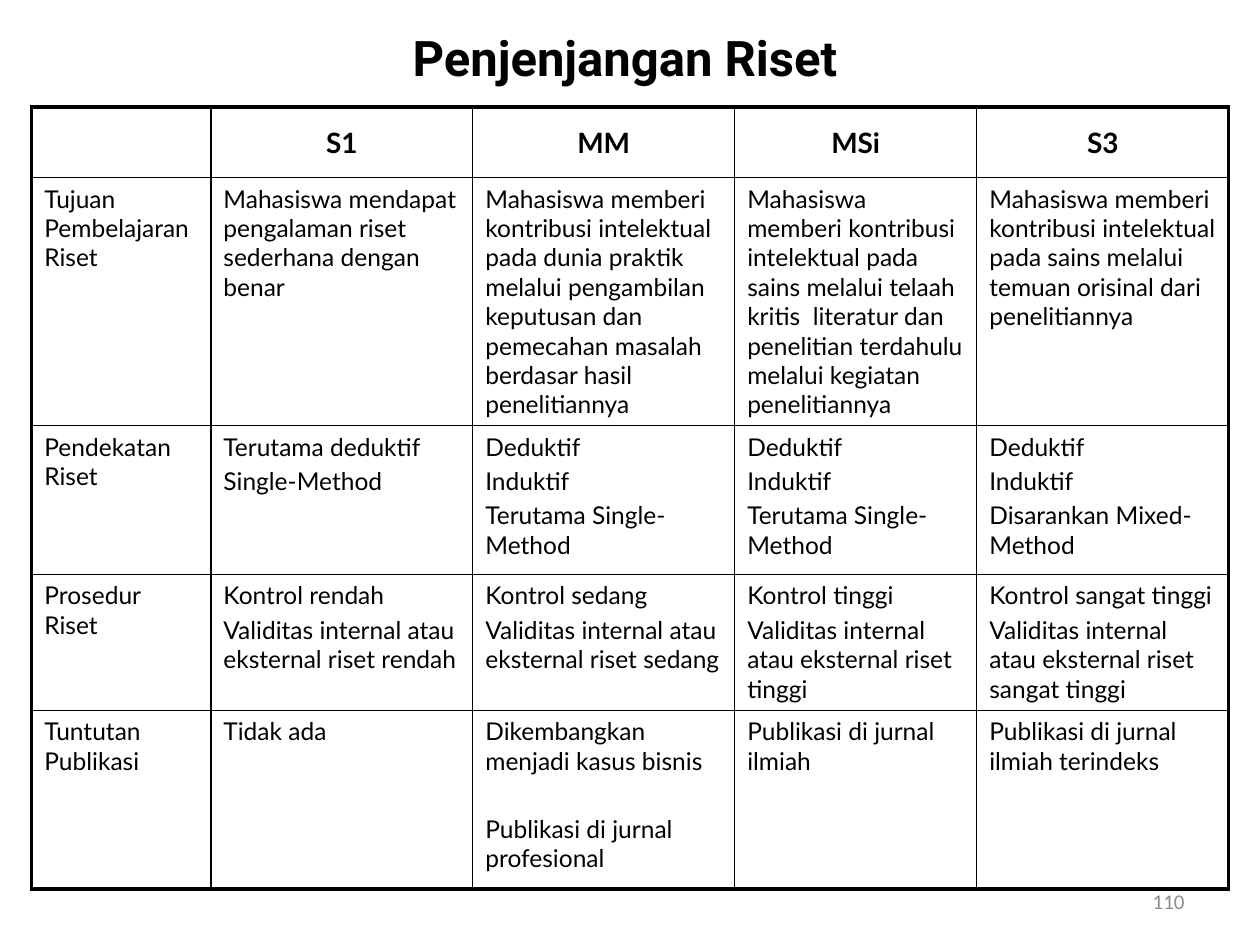
"""Build the slide comparing research levels across degree programmes."""
from lxml.etree import SubElement
from pptx import Presentation
from pptx.dml.color import RGBColor
from pptx.enum.text import MSO_ANCHOR as ANCHOR, MSO_AUTO_SIZE as FIT, PP_ALIGN as ALIGN
from pptx.oxml.ns import qn
from pptx.util import Cm, Pt


def write(tf, text, size=14, font="Lato", color="000000", bold=False,
          align=ALIGN.LEFT, anchor=ANCHOR.TOP, gap=2.8):
    tf.word_wrap = True
    tf.vertical_anchor = anchor
    for i, line in enumerate(text.split("\n")):
        p = tf.add_paragraph() if i else tf.paragraphs[0]
        p.alignment = align
        p.space_before = Pt(gap if i else 0)
        r = p.add_run()
        r.text = line
        r.font.size = Pt(size)
        r.font.name = font
        r.font.bold = bold
        r.font.color.rgb = RGBColor.from_string(color)


def set_border(cell, side, width, color="000000"):
    ln = SubElement(cell._tc.get_or_add_tcPr(), qn(f"a:ln{side}"), w=str(Pt(width)))
    SubElement(SubElement(ln, qn("a:solidFill")), qn("a:srgbClr"), val=color)


prs = Presentation()
prs.slide_width, prs.slide_height = Cm(25.4), Cm(19.05)
s = prs.slides.add_slide(prs.slide_layouts[5])

title = s.shapes.title
title.left, title.top, title.width, title.height = Cm(0.43), Cm(0.43), Cm(24.33), Cm(1.57)
tf = title.text_frame
tf.auto_size = FIT.NONE
tf.margin_left = tf.margin_right = tf.margin_bottom = Cm(0.25)
tf.margin_top = Cm(0.13)
write(tf, "Penjenjangan Riset", size=28, font="Roboto", bold=True,
      align=ALIGN.CENTER, anchor=ANCHOR.BOTTOM)

rows = [
    ["", "S1", "MM", "MSi", "S3"],
    ["Tujuan Pembelajaran Riset",
     "Mahasiswa mendapat pengalaman riset sederhana dengan benar",
     "Mahasiswa memberi kontribusi intelektual pada dunia praktik  melalui "
     "pengambilan keputusan dan pemecahan masalah berdasar hasil penelitiannya",
     "Mahasiswa memberi kontribusi intelektual pada sains melalui telaah "
     "kritis  literatur dan penelitian terdahulu melalui kegiatan penelitiannya",
     "Mahasiswa memberi kontribusi intelektual pada sains melalui temuan "
     "orisinal dari penelitiannya"],
    ["Pendekatan Riset",
     "Terutama deduktif\nSingle-Method",
     "Deduktif\nInduktif\nTerutama Single-Method",
     "Deduktif\nInduktif\nTerutama Single-Method",
     "Deduktif\nInduktif\nDisarankan Mixed-Method"],
    ["Prosedur Riset"] + [
        f"Kontrol {level}\nValiditas internal atau eksternal riset {level}"
        for level in ("rendah", "sedang", "tinggi", "sangat tinggi")],
    ["Tuntutan Publikasi",
     "Tidak ada",
     "Dikembangkan menjadi kasus bisnis\nPublikasi di jurnal profesional",
     "Publikasi di jurnal ilmiah",
     "Publikasi di jurnal ilmiah terindeks"],
]
col_widths = [3.61, 5.28, 5.28, 4.88, 5.08]
row_heights = [1.42, 5, 3, 2.74, 3.6]
last_row, last_col = len(rows) - 1, len(col_widths) - 1

table = s.shapes.add_table(len(rows), len(col_widths), Cm(0.64), Cm(2.16),
                           Cm(sum(col_widths)), Cm(sum(row_heights))).table
table.first_row = table.horz_banding = False
for col, width in zip(table.columns, col_widths):
    col.width = Cm(width)
for row, height in zip(table.rows, row_heights):
    row.height = Cm(height)

for i, texts in enumerate(rows):
    for j, text in enumerate(texts):
        cell = table.cell(i, j)
        outer = {"L": j == 0, "R": j == last_col, "T": i == 0, "B": i == last_row}
        for side, is_outer in outer.items():
            set_border(cell, side, 2.25 if is_outer else 1)
        cell.fill.background()
        if i == 0:
            cell.vertical_anchor = ANCHOR.MIDDLE
        if text:
            write(cell.text_frame, text, size=14 if i else 16, bold=i == 0,
                  align=ALIGN.LEFT if i else ALIGN.CENTER,
                  gap=22 if i == last_row else 2.8)

sp = s.shapes.add_textbox(Cm(18.21), Cm(17.65), Cm(5.92), Cm(1.02))
write(sp.text_frame, "110", size=12, font="Calibri", color="8C8C8C",
      align=ALIGN.RIGHT, anchor=ANCHOR.MIDDLE)

prs.save("out.pptx")
